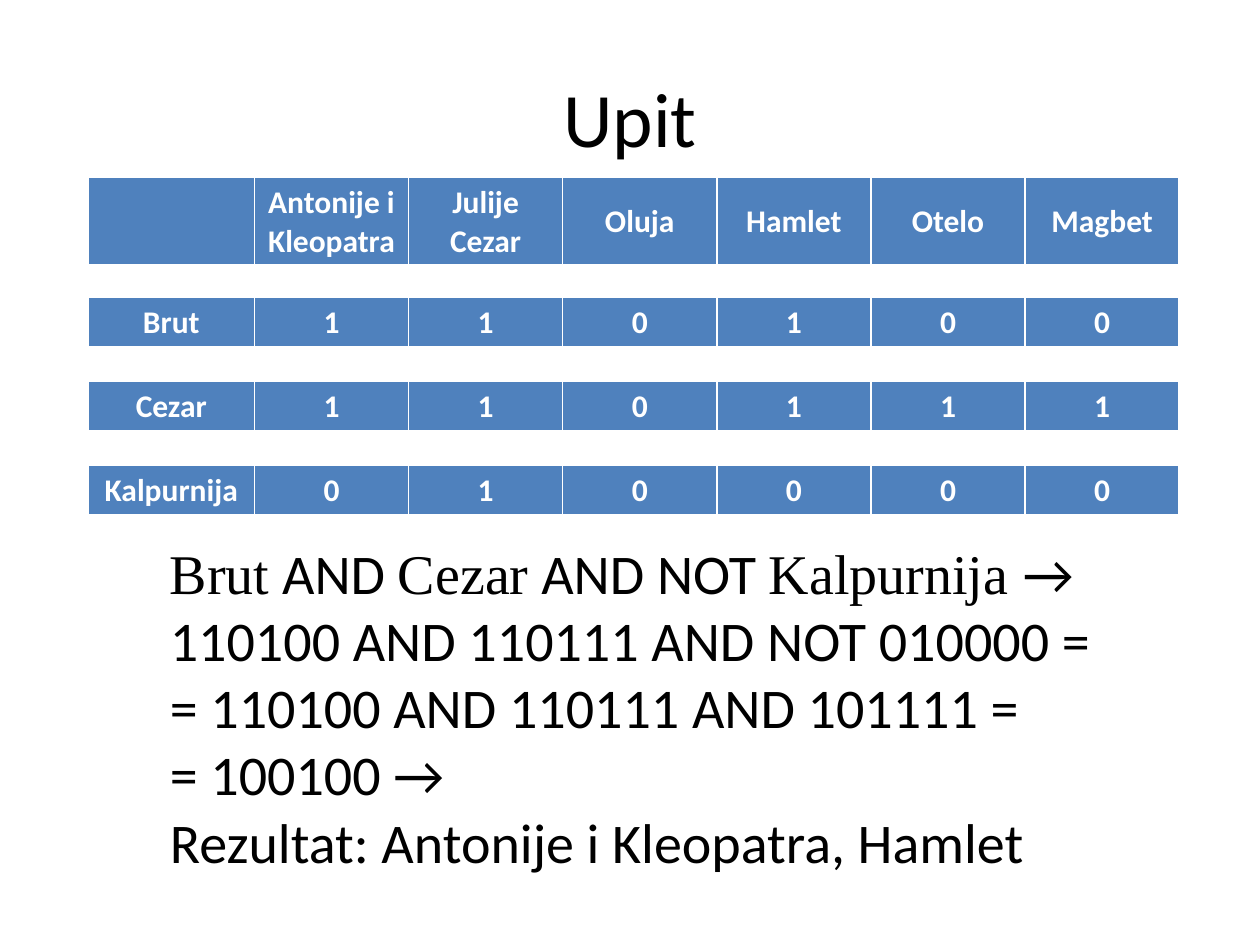
from lxml.etree import SubElement
from pptx import Presentation
from pptx.dml.color import RGBColor as Rgb
from pptx.enum.text import MSO_ANCHOR as Anchor, PP_ALIGN as Align
from pptx.oxml.ns import qn
from pptx.util import Pt

COLORS = {"ink": "000000", "paper": "FFFFFF", "cell": "4F81BD"}
SANS, SERIF = "Calibri", "Times New Roman"
BORDERS = {"a:lnL": 1, "a:lnR": 1, "a:lnT": 1, "a:lnB": 3}
COLUMN_WIDTHS = [95] + [88.1] * 6
TABLE_LEFT, HEADER_TOP, TERM_TOP, TERM_STEP = 50.4, 101.5, 170, 47.8
HEADER_HEIGHT, TERM_HEIGHT = 50.4, 29.2

PLAYS = ["", "Antonije i\nKleopatra", "Julije\nCezar", "Oluja", "Hamlet", "Otelo", "Magbet"]
INCIDENCE = {"Brut": "110100", "Cezar": "110111", "Kalpurnija": "010000"}
QUERY = [
    [("Brut", SERIF), (" AND ", SANS), ("Cezar", SERIF), (" AND NOT ", SANS),
     ("Kalpurnija ", SERIF), ("→", SANS)],
    [("110100 AND 110111 AND NOT 010000 =", SANS)],
    [("= 110100 AND 110111 AND 101111 =", SANS)],
    [("= 100100 →", SANS)],
    [("Rezultat: Antonije i Kleopatra, Hamlet", SANS)],
]


class SlideBuilder:
    """Draws text and one-row tables on the current slide in a shared style."""

    def __init__(self, slide):
        self.slide = slide

    def add_lines(self, frame, lines, align, color, **font_format):
        for index, line in enumerate(lines):
            paragraph = frame.add_paragraph() if index else frame.paragraphs[0]
            paragraph.alignment = align
            for words, face in line:
                run = paragraph.add_run()
                run.text = words
                run.font.color.rgb = Rgb.from_string(COLORS[color])
                for key, value in {"name": face, **font_format}.items():
                    setattr(run.font, key, value)

    def text(self, box, lines, size, align=Align.LEFT, anchor=Anchor.TOP):
        frame = self.slide.shapes.add_textbox(*map(Pt, box)).text_frame
        for key, value in {"word_wrap": True, "vertical_anchor": anchor}.items():
            setattr(frame, key, value)
        self.add_lines(frame, lines, align, "ink", size=Pt(size))

    def border(self, cell):
        properties = cell._tc.get_or_add_tcPr()
        for side, width in BORDERS.items():
            edge = SubElement(properties, qn(side), w=str(Pt(width)))
            fill = SubElement(edge, qn("a:solidFill"))
            SubElement(fill, qn("a:srgbClr"), val=COLORS["paper"])

    def table_row(self, top, height, labels):
        box = TABLE_LEFT, top, sum(COLUMN_WIDTHS), height
        table = self.slide.shapes.add_table(1, len(labels), *map(Pt, box)).table
        for column, width in zip(table.columns, COLUMN_WIDTHS):
            column.width = Pt(width)
        for cell, label in zip(table.iter_cells(), labels):
            self.border(cell)
            cell.fill.solid()
            cell.fill.fore_color.rgb = Rgb.from_string(COLORS["cell"])
            cell.vertical_anchor = Anchor.MIDDLE
            if label:
                lines = [[(line, SANS)] for line in label.split("\n")]
                self.add_lines(cell.text_frame, lines, Align.CENTER, "paper", size=Pt(18), bold=True)


def main():
    deck = Presentation()
    deck.slide_width, deck.slide_height = Pt(720), Pt(540)
    builder = SlideBuilder(deck.slides.add_slide(deck.slide_layouts[6]))
    builder.text((36, 21.6, 648, 90), [[("Upit", SANS)]], 44, Align.CENTER, Anchor.MIDDLE)
    builder.table_row(HEADER_TOP, HEADER_HEIGHT, PLAYS)
    for index, (term, bits) in enumerate(INCIDENCE.items()):
        builder.table_row(TERM_TOP + index * TERM_STEP, TERM_HEIGHT, [term, *bits])
    builder.text((90, 304, 551.5, 201), QUERY, 32)
    deck.save("out.pptx")


if __name__ == "__main__":
    main()
